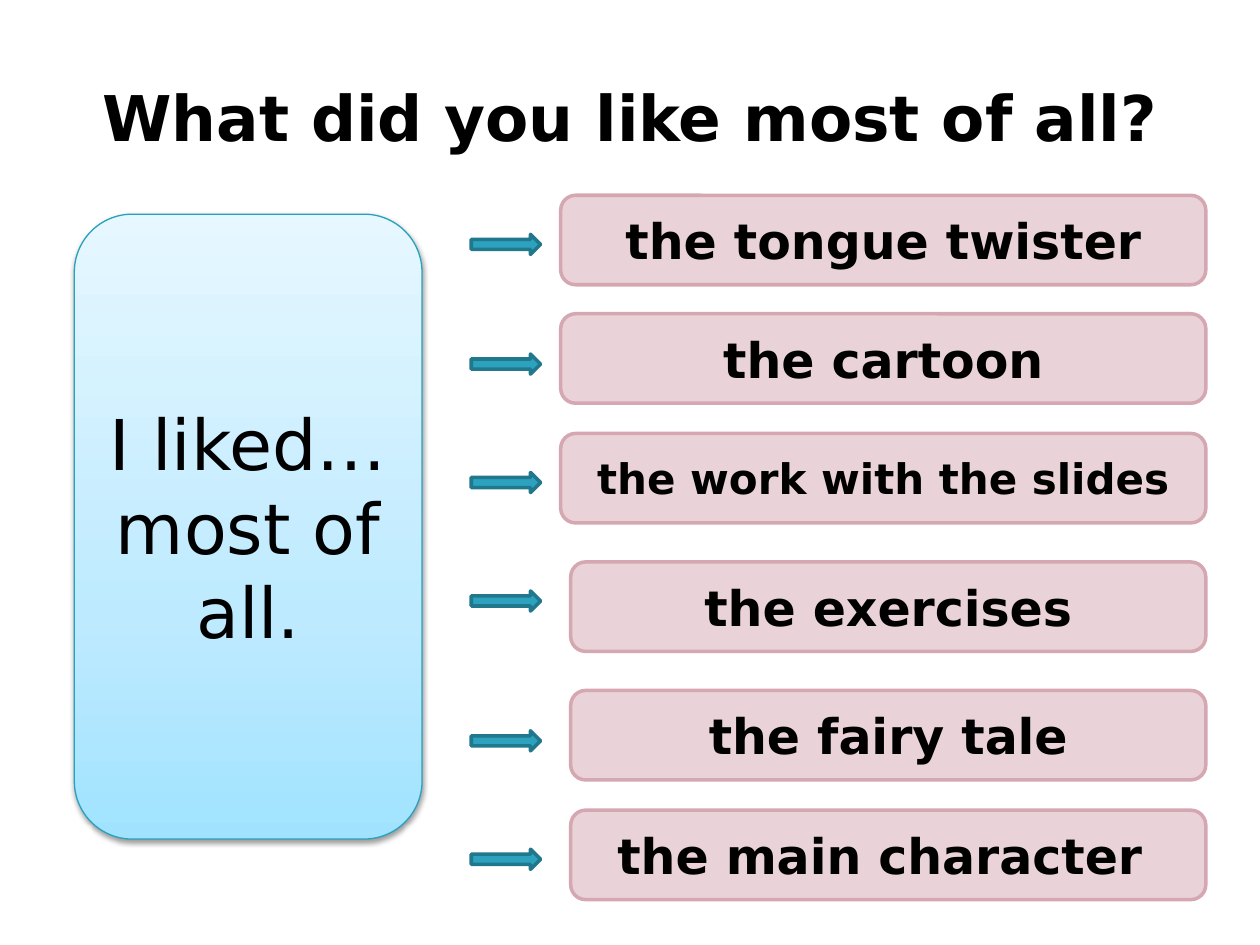
"""Build a feedback slide: a sentence starter with arrows to six possible answers."""
import copy

import lxml.etree
import pptx
import pptx.dml.color
import pptx.enum.shapes
import pptx.enum.text
import pptx.oxml.ns
import pptx.util

Inches, Pt = pptx.util.Inches, pptx.util.Pt
RGBColor = pptx.dml.color.RGBColor
SHAPES = pptx.enum.shapes.MSO_SHAPE
qn = pptx.oxml.ns.qn

FONT = "DejaVu Sans"
BLACK = RGBColor(0x00, 0x00, 0x00)
PINK = RGBColor(0xEA, 0xD3, 0xD8)
ROSE = RGBColor(0xD5, 0xA7, 0xB1)
TEAL = RGBColor(0x2D, 0xA2, 0xBF)
DARK_TEAL = RGBColor(0x21, 0x78, 0x8D)
STARTER_EDGE = RGBColor(0x28, 0xA1, 0xBE)
STARTER_STOPS = [
    (0, RGBColor(0xA1, 0xE3, 0xFF)),
    (0.35, RGBColor(0xBD, 0xEA, 0xFF)),
    (1, RGBColor(0xE6, 0xF7, 0xFF)),
]

QUESTION = "What did you like most of all?"
STARTER = "I liked… most of all."
ANSWERS = [
    # text, size, left, top, arrow top
    ("the tongue twister", 28, 4.45, 1.55, 1.86),
    ("the cartoon", 28, 4.45, 2.49, 2.81),
    ("the work with the slides", 24, 4.45, 3.44, 3.75),
    ("the exercises", 28, 4.53, 4.46, 4.69),
    ("the fairy tale", 28, 4.53, 5.48, 5.80),
    ("the main character ", 28, 4.53, 6.43, 6.74),
]
ANSWER_RIGHT, ANSWER_HEIGHT = 9.57, 0.71
ARROW_LEFT, ARROW_WIDTH, ARROW_HEIGHT = 3.74, 0.55, 0.16


def write(shape, text, size, bold):
    frame = shape.text_frame
    frame.word_wrap = True
    frame.vertical_anchor = pptx.enum.text.MSO_ANCHOR.MIDDLE
    paragraph = frame.paragraphs[0]
    paragraph.text = text
    paragraph.alignment = pptx.enum.text.PP_ALIGN.CENTER
    font = paragraph.font
    font.name, font.size, font.bold = FONT, Pt(size), bold
    font.color.rgb = BLACK


def add_box(slide, kind, box, fill, edge, edge_width):
    shape = slide.shapes.add_shape(kind, *map(Inches, box))
    shape.shadow.inherit = False
    if fill is not None:
        shape.fill.solid()
        shape.fill.fore_color.rgb = fill
    shape.line.color.rgb = edge
    shape.line.width = Pt(edge_width)
    return shape


def shade(shape, stops):
    shape.fill.gradient()
    shape.fill.gradient_angle = 90
    stop_list = shape._element.spPr.find(".//" + qn("a:gsLst"))
    while len(stop_list) < len(stops):
        stop_list.append(copy.deepcopy(stop_list[-1]))
    for stop, (position, color) in zip(shape.fill.gradient_stops, stops):
        stop.position = position
        stop.color.rgb = color


def cast_shadow(shape):
    effects = shape._element.spPr.find(qn("a:effectLst"))
    shadow = lxml.etree.SubElement(
        effects, qn("a:outerShdw"), blurRad=str(Pt(3.1)), dist=str(Pt(1.6)),
        dir="5400000", rotWithShape="0")
    color = lxml.etree.SubElement(shadow, qn("a:srgbClr"), val="000000")
    lxml.etree.SubElement(color, qn("a:alpha"), val="38000")


def main():
    deck = pptx.Presentation()
    deck.slide_width, deck.slide_height = Inches(10), Inches(7.5)
    slide = deck.slides.add_slide(deck.slide_layouts[5])

    question = slide.shapes.title
    question.left, question.top = Inches(0.5), Inches(0.3)
    question.width, question.height = Inches(9), Inches(1.25)
    write(question, QUESTION, 36, True)

    starter = add_box(slide, SHAPES.ROUNDED_RECTANGLE, (0.59, 1.7, 2.76, 4.96),
                      None, STARTER_EDGE, 0.75)
    shade(starter, STARTER_STOPS)
    cast_shadow(starter)
    write(starter, STARTER, 40, False)

    for text, size, left, top, arrow_top in ANSWERS:
        answer = add_box(slide, SHAPES.ROUNDED_RECTANGLE,
                         (left, top, ANSWER_RIGHT - left, ANSWER_HEIGHT), PINK, ROSE, 2)
        write(answer, text, size, True)
        add_box(slide, SHAPES.RIGHT_ARROW,
                (ARROW_LEFT, arrow_top, ARROW_WIDTH, ARROW_HEIGHT), TEAL, DARK_TEAL, 2)

    deck.save("out.pptx")


if __name__ == "__main__":
    main()
